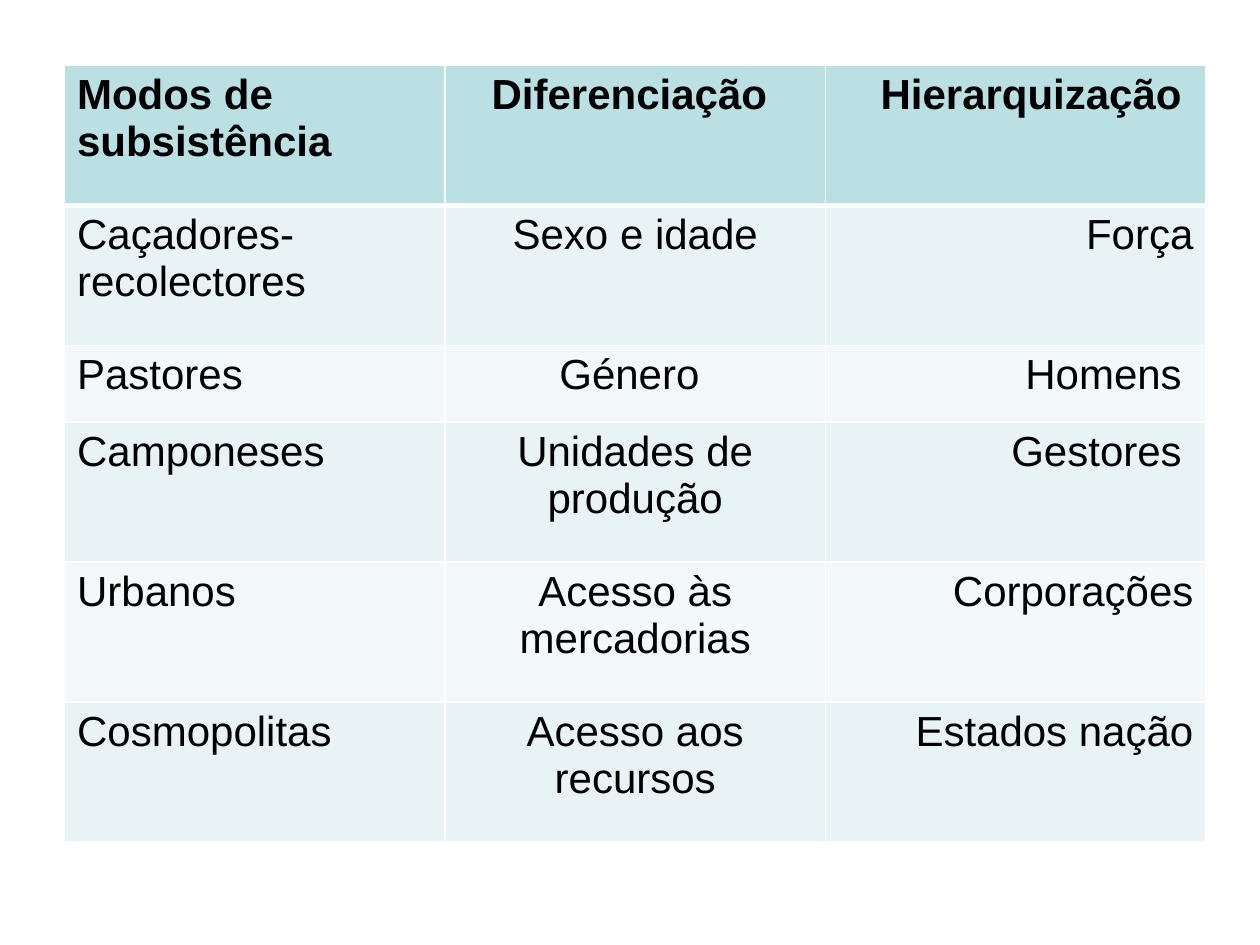
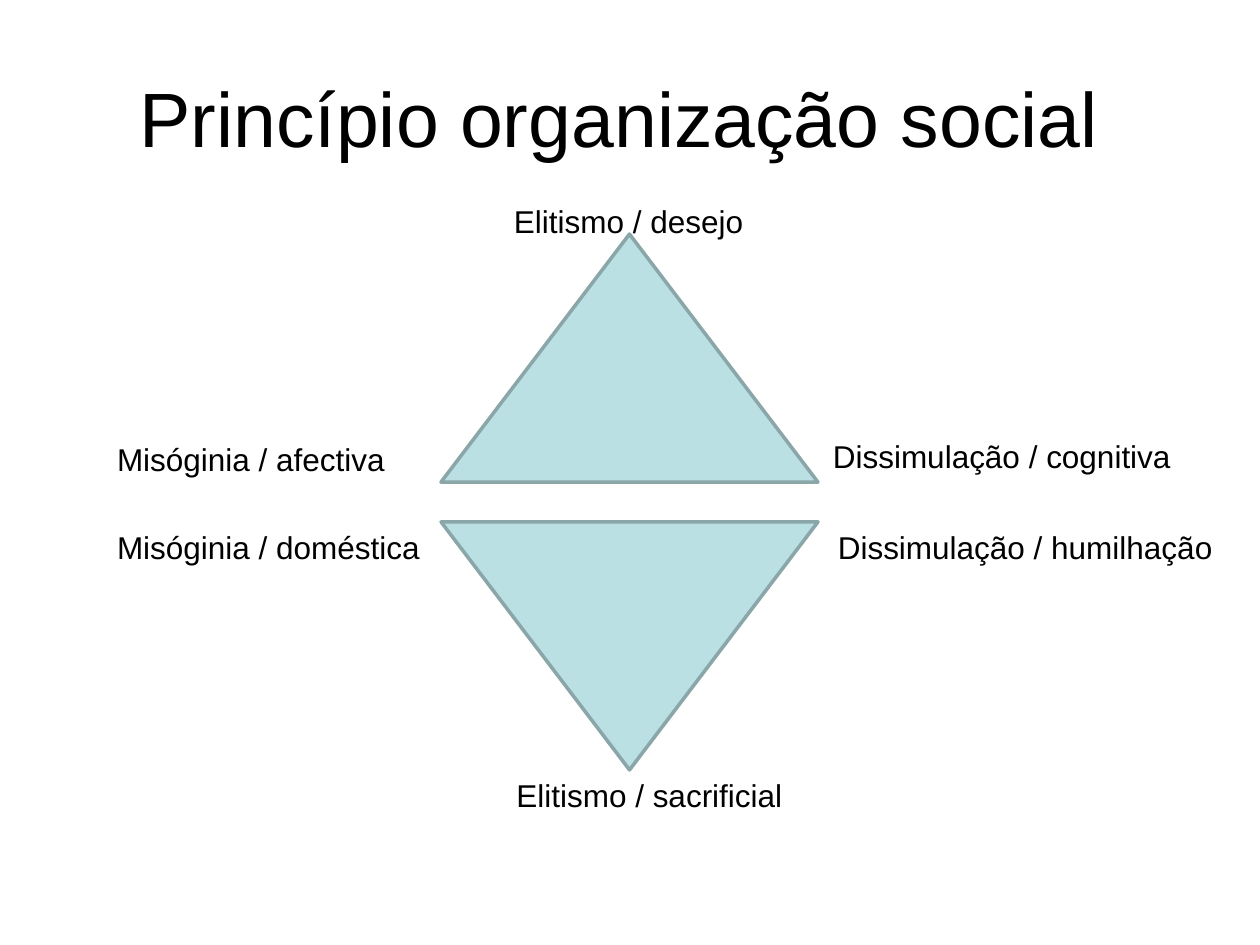
import dataclasses

import lxml.etree
import pptx
import pptx.dml.color
import pptx.enum.shapes
import pptx.enum.text
import pptx.oxml.ns
import pptx.util

Cm = pptx.util.Cm
Pt = pptx.util.Pt
Align = pptx.enum.text.PP_ALIGN
Anchor = pptx.enum.text.MSO_ANCHOR


@dataclasses.dataclass(frozen=True)
class Theme:
    font: str = "Arial"
    ink: str = "000000"
    paper: str = "FFFFFF"
    accent: str = "BBE0E3"
    outline: str = "8AA6A8"
    bands: tuple = ("E7F3F4", "F3F9FA")
    title_size: int = 44
    table_size: int = 24
    label_size: int = 18


THEME = Theme()

SUBSISTENCE_ROWS = [
    ("Modos de subsistência", "Diferenciação ", "Hierarquização "),
    ("Caçadores-recolectores", "Sexo e idade", "Força"),
    ("Pastores", "Género ", "Homens "),
    ("Camponeses", "Unidades de produção", "Gestores "),
    ("Urbanos", "Acesso às mercadorias", "Corporações"),
    ("Cosmopolitas", "Acesso aos recursos", "Estados nação"),
]
COLUMN_ALIGNMENTS = (Align.LEFT, Align.CENTER, Align.RIGHT)
COLUMN_WIDTH = 7.67
TALL_ROW, SHORT_ROW = 2.82, 1.55
ROW_HEIGHTS = (TALL_ROW, TALL_ROW, SHORT_ROW, TALL_ROW, TALL_ROW, TALL_ROW)

TRIANGLES = [(4.72, 0), (10.52, 180)]
LABELS = [
    ("Misóginia / afectiva", 2.11, 8.74, 5.97),
    ("Dissimulação / cognitiva", 16.54, 8.69, 7.39),
    ("Elitismo / desejo", 10.11, 3.94, 5.18),
    ("Elitismo / sacrificial", 10.16, 15.52, 5.92),
    ("Misóginia / doméstica", 2.11, 10.52, 6.68),
    ("Dissimulação / humilhação", 16.64, 10.52, 8.13),
]


def color(value):
    return pptx.dml.color.RGBColor.from_string(value)


def write(frame, text, size, alignment=Align.LEFT, bold=False):
    frame.text = text
    para = frame.paragraphs[0]
    para.alignment = alignment
    para.font.name = THEME.font
    para.font.size = Pt(size)
    para.font.bold = bold
    para.font.color.rgb = color(THEME.ink)


def add_borders(cell, top, bottom):
    properties = cell._tc.get_or_add_tcPr()
    widths = {"a:lnL": 1, "a:lnR": 1, "a:lnT": top, "a:lnB": bottom}
    for position, (tag, width) in enumerate(widths.items()):
        line = lxml.etree.Element(pptx.oxml.ns.qn(tag), w=str(Pt(width)))
        fill = lxml.etree.SubElement(line, pptx.oxml.ns.qn("a:solidFill"))
        lxml.etree.SubElement(fill, pptx.oxml.ns.qn("a:srgbClr"), val=THEME.paper)
        properties.insert(position, line)


def add_banded_table(page, left, top, rows):
    frame = page.shapes.add_table(
        len(rows), len(COLUMN_ALIGNMENTS), Cm(left), Cm(top),
        Cm(COLUMN_WIDTH * len(COLUMN_ALIGNMENTS)), Cm(sum(ROW_HEIGHTS)),
    )
    table = frame.table
    for column in table.columns:
        column.width = Cm(COLUMN_WIDTH)
    for row_index, texts in enumerate(rows):
        table.rows[row_index].height = Cm(ROW_HEIGHTS[row_index])
        is_header = row_index == 0
        background = THEME.accent if is_header else THEME.bands[(row_index - 1) % 2]
        for column_index, text in enumerate(texts):
            cell = table.cell(row_index, column_index)
            cell.fill.solid()
            cell.fill.fore_color.rgb = color(background)
            add_borders(cell, 3 if row_index == 1 else 1, 3 if is_header else 1)
            write(cell.text_frame, text, THEME.table_size,
                  COLUMN_ALIGNMENTS[column_index], is_header)


def set_title(page, text):
    title = page.shapes.title
    title.left, title.top = Cm(1.27), Cm(0.76)
    title.width, title.height = Cm(22.86), Cm(3.18)
    title.text_frame.vertical_anchor = Anchor.MIDDLE
    write(title.text_frame, text, THEME.title_size, Align.CENTER)


def add_triangle(page, top, rotation):
    triangle = page.shapes.add_shape(
        pptx.enum.shapes.MSO_SHAPE.ISOSCELES_TRIANGLE,
        Cm(8.89), Cm(top), Cm(7.6), Cm(5),
    )
    triangle.rotation = rotation
    triangle.shadow.inherit = False
    triangle.fill.solid()
    triangle.fill.fore_color.rgb = color(THEME.accent)
    triangle.line.color.rgb = color(THEME.outline)
    triangle.line.width = Pt(2)


def add_label(page, text, left, top, width):
    box = page.shapes.add_textbox(Cm(left), Cm(top), Cm(width), Cm(1.02))
    box.text_frame.word_wrap = False
    box.text_frame.auto_size = pptx.enum.text.MSO_AUTO_SIZE.SHAPE_TO_FIT_TEXT
    write(box.text_frame, text, THEME.label_size)


def main():
    deck = pptx.Presentation()
    deck.slide_width, deck.slide_height = Cm(25.4), Cm(19.05)
    title_only = deck.slide_layouts.get_by_name("Title Only")
    blank = deck.slide_layouts.get_by_name("Blank")

    table_page = deck.slides.add_slide(blank)
    add_banded_table(table_page, 1.3, 1.32, SUBSISTENCE_ROWS)

    diagram_page = deck.slides.add_slide(title_only)
    set_title(diagram_page, "Princípio organização social ")
    for top, rotation in TRIANGLES:
        add_triangle(diagram_page, top, rotation)
    for label in LABELS:
        add_label(diagram_page, *label)

    deck.save("out.pptx")


if __name__ == "__main__":
    main()
